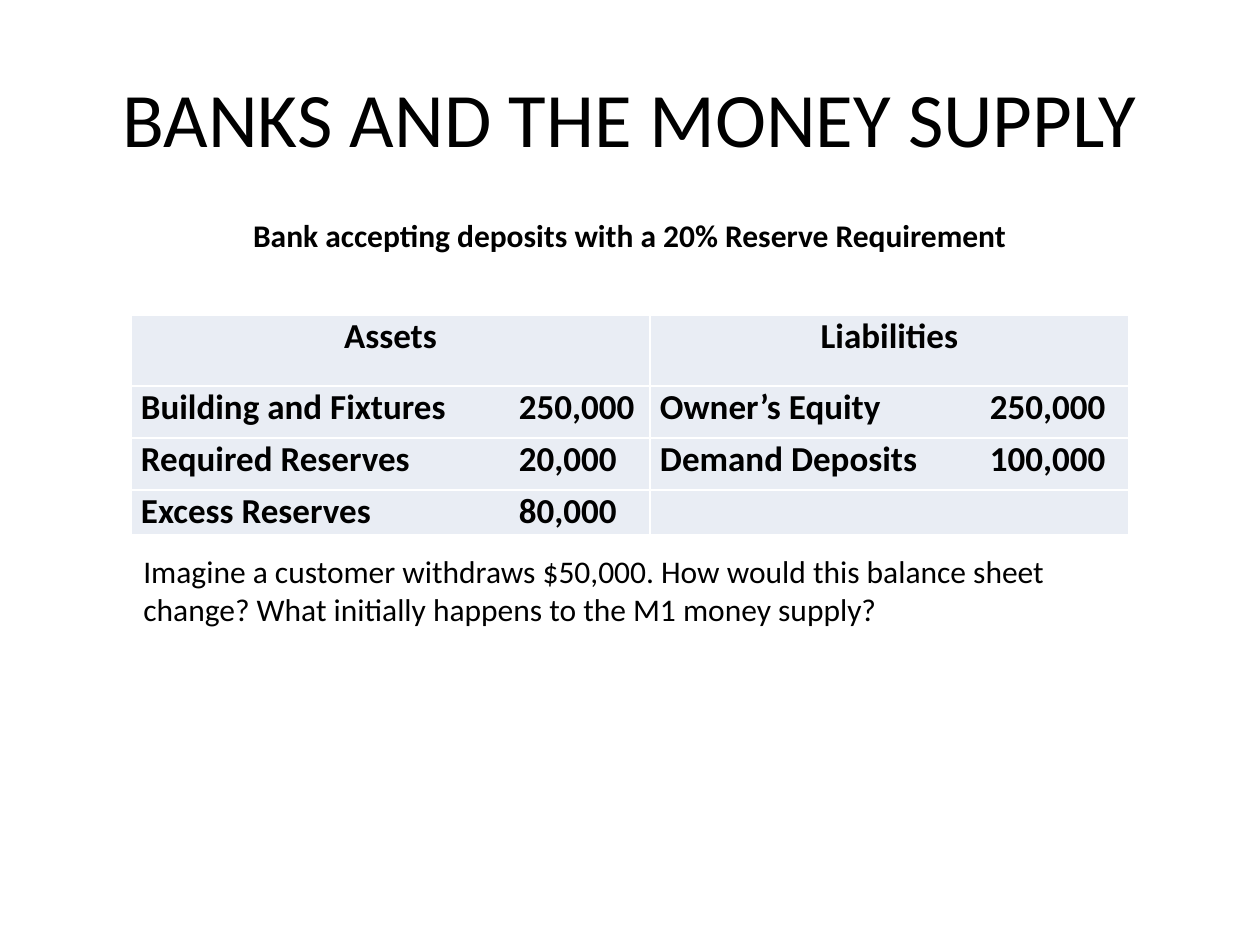
from lxml import etree
from pptx import Presentation
from pptx import util as u
from pptx.dml.color import RGBColor
from pptx.enum import text
from pptx.oxml import ns

PX = 914400 / 126
BLACK = RGBColor(0x00, 0x00, 0x00)
WHITE = RGBColor(0xFF, 0xFF, 0xFF)
PALE = RGBColor(0xE9, 0xED, 0xF4)
CENTER, LEFT = text.PP_ALIGN.CENTER, text.PP_ALIGN.LEFT


def px(n):
    return u.Emu(round(n * PX))


def write(tf, words, size, bold=False, align=LEFT):
    p = tf.paragraphs[0]
    p.alignment = align
    r = p.add_run()
    r.text = words
    for name, value in {"name": "Calibri", "size": u.Pt(size), "bold": bold}.items():
        setattr(r.font, name, value)
    r.font.color.rgb = BLACK
    return p


prs = Presentation()
prs.slide_width, prs.slide_height = px(1260), px(945)
s = prs.slides.add_slide(prs.slide_layouts[5])

title = s.shapes.title
for name, value in {"left": 63, "top": 38, "width": 1134, "height": 158}.items():
    setattr(title, name, px(value))
title.text_frame.vertical_anchor = text.MSO_ANCHOR.MIDDLE
write(title.text_frame, "BANKS AND THE MONEY SUPPLY", 44, align=CENTER)

notes = [
    (210, 50, "Bank accepting deposits with a 20% Reserve Requirement", True, CENTER),
    (546, 89, "Imagine a customer withdraws $50,000. How would this balance sheet change? "
              "What initially happens to the M1 money supply?", False, LEFT),
]
for top, height, words, bold, align in notes:
    tf = s.shapes.add_textbox(px(131), px(top), px(998), px(height)).text_frame
    tf.word_wrap = True
    tf.auto_size = text.MSO_AUTO_SIZE.SHAPE_TO_FIT_TEXT
    write(tf, words, 18, bold, align)

balance = [
    ["Assets", "Liabilities"],
    ["Building and Fixtures\t250,000", "Owner’s Equity\t250,000"],
    ["Required Reserves\t20,000", "Demand Deposits\t100,000"],
    ["Excess Reserves\t80,000", ""],
]
col_widths = [519, 479]
row_heights = [71, 52, 52, 45]
amount_tabs = [378, 330]

table = s.shapes.add_table(4, 2, px(131), px(315), px(sum(col_widths)), px(sum(row_heights))).table
table.first_row = table.horz_banding = False
for col, width in zip(table.columns, col_widths):
    col.width = px(width)
for row, height in zip(table.rows, row_heights):
    row.height = px(height)

for i, entries in enumerate(balance):
    for j, words in enumerate(entries):
        cell = table.cell(i, j)
        margins = {"margin_left": 10, "margin_right": 10, "margin_top": 0, "margin_bottom": 0}
        for name, value in margins.items():
            setattr(cell, name, px(value))
        tcPr = cell._tc.get_or_add_tcPr()
        for side in ("a:lnL", "a:lnR", "a:lnT", "a:lnB"):
            ln = etree.SubElement(tcPr, ns.qn(side), w=str(u.Pt(1)))
            fill = etree.SubElement(ln, ns.qn("a:solidFill"))
            etree.SubElement(fill, ns.qn("a:srgbClr"), val=str(WHITE))
        cell.fill.solid()
        cell.fill.fore_color.rgb = PALE
        if words:
            p = write(cell.text_frame, words, 20, True, LEFT if i else CENTER)
            if i:
                tabs = etree.SubElement(p._p.get_or_add_pPr(), ns.qn("a:tabLst"))
                etree.SubElement(tabs, ns.qn("a:tab"), pos=str(px(amount_tabs[j])), algn="l")

prs.save("out.pptx")
